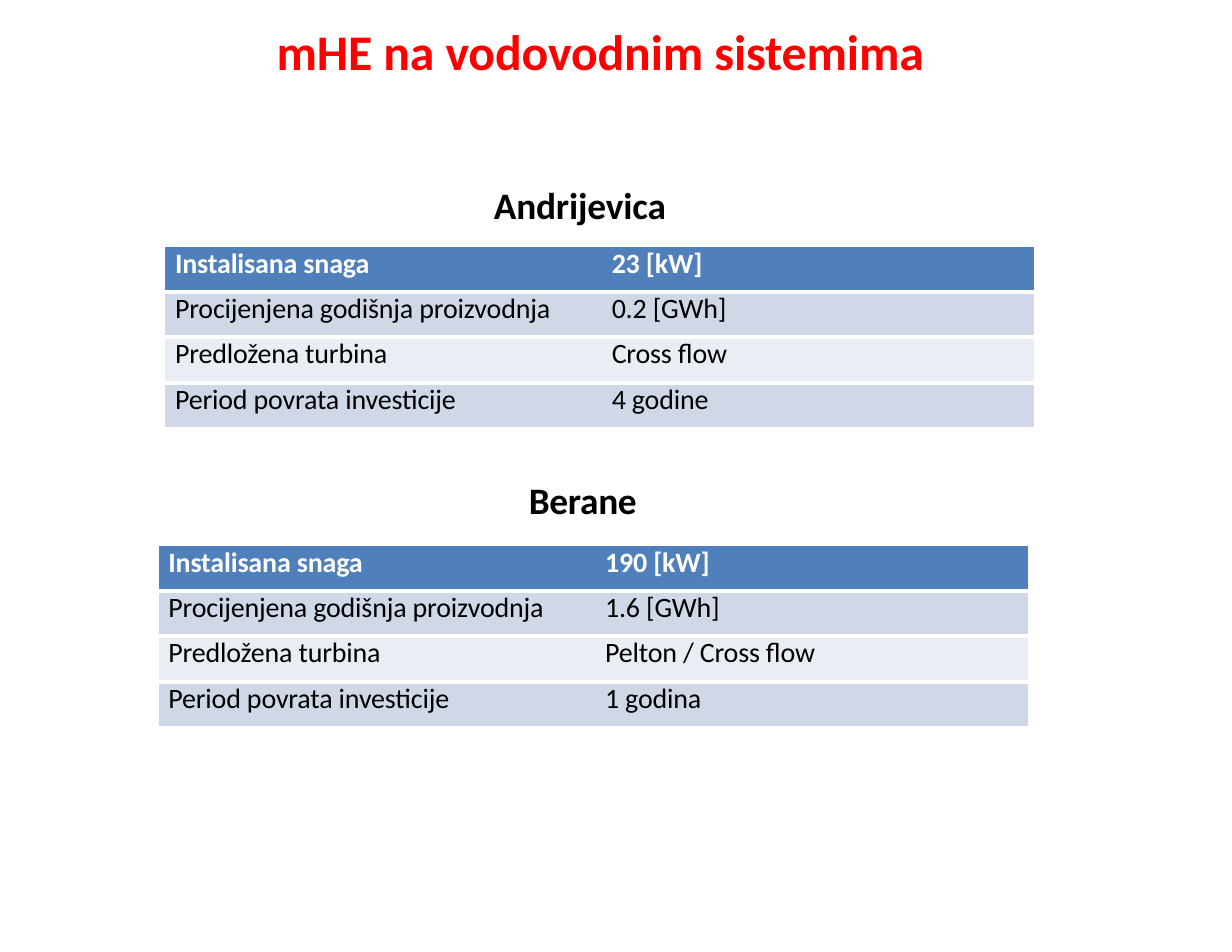
from lxml.etree import SubElement
from pptx import Presentation
from pptx.dml.color import RGBColor
from pptx.enum.text import MSO_ANCHOR
from pptx.oxml.ns import qn
from pptx.util import Pt

WHITE = "FFFFFF"
BLACK = "000000"
RED = "FF0000"
HEADER_BLUE = "4F80BC"
BANDS = ["D0D8E8", "E9EDF4"]
PLAIN_TABLE_STYLE = "{2D5ABB26-0587-4C30-8999-92F81FD0307C}"
COLUMN_WIDTHS = [270, 289.5]
COLUMN_INDENTS = [6.75, 17.5]
ROW_HEIGHT = 29.2
LABELS = ["Instalisana snaga", "Procijenjena godišnja proizvodnja",
          "Predložena turbina", "Period povrata investicije"]


def color(value):
    return RGBColor.from_string(value)


def write(frame, text, size=18, ink=BLACK, bold=False, spacing=-0.1):
    """Put one formatted paragraph in a text frame; spacing is in points."""
    span = frame.paragraphs[0].add_run()
    span.text = text
    span.font.name = "Calibri"
    span.font.size = Pt(size)
    span.font.bold = bold
    span.font.color.rgb = color(ink)
    span._r.get_or_add_rPr().set("spc", str(round(spacing * 100)))


def add_heading(slide, text, left, top, width, height, indent=0, inset=0, **style):
    box = slide.shapes.add_textbox(Pt(left), Pt(top), Pt(width), Pt(height))
    frame = box.text_frame
    frame.word_wrap = True
    frame.margin_left, frame.margin_top = Pt(indent), Pt(inset)
    frame.margin_right = frame.margin_bottom = 0
    write(frame, text, bold=True, **style)


def set_borders(cell, widths):
    """Draw white borders; they must come before the fill in the cell's XML."""
    properties = cell._tc.get_or_add_tcPr()
    for side in ("L", "R", "T", "B"):
        if side in widths:
            line = SubElement(properties, qn(f"a:ln{side}"), w=str(Pt(widths[side])))
            fill = SubElement(line, qn("a:solidFill"))
            SubElement(fill, qn("a:srgbClr"), val=WHITE)


def border_widths(row, column):
    widths = {"L" if column == 0 else "R": 1}
    if row == 0:
        widths["T"] = 1
    elif row < 3:
        widths["T"] = 3
    if row < 2:
        widths["B"] = 3
    elif row == 3:
        widths["B"] = 1
    return widths


def add_plant_table(slide, left, top, values):
    frame = slide.shapes.add_table(len(LABELS), 2, Pt(left), Pt(top),
                                   Pt(sum(COLUMN_WIDTHS)), Pt(ROW_HEIGHT * len(LABELS)))
    table = frame.table
    table._tbl.tblPr.find(qn("a:tableStyleId")).text = PLAIN_TABLE_STYLE
    for column, width in zip(table.columns, COLUMN_WIDTHS):
        column.width = Pt(width)
    for r, texts in enumerate(zip(LABELS, values)):
        table.rows[r].height = Pt(ROW_HEIGHT)
        header = r == 0
        for c, text in enumerate(texts):
            cell = table.cell(r, c)
            cell.margin_left = Pt(COLUMN_INDENTS[c])
            cell.margin_top = cell.margin_right = cell.margin_bottom = 0
            cell.vertical_anchor = MSO_ANCHOR.TOP
            set_borders(cell, border_widths(r, c))
            cell.fill.solid()
            cell.fill.fore_color.rgb = color(HEADER_BLUE if header else BANDS[(r - 1) % 2])
            write(cell.text_frame, text, ink=WHITE if header else BLACK, bold=header)


def main():
    deck = Presentation()
    deck.slide_width, deck.slide_height = Pt(792), Pt(612)
    slide = deck.slides.add_slide(deck.slide_layouts[6])

    add_heading(slide, "Andrijevica", 317.5, 117.4, 114, 31, size=24)
    add_heading(slide, "Berane", 340, 306.7, 73, 31, size=24, spacing=-0.2)
    add_plant_table(slide, 105.8, 158.4, ["23 [kW]", "0.2 [GWh]", "Cross flow", "4 godine"])
    add_plant_table(slide, 101.5, 350.6,
                    ["190 [kW]", "1.6 [GWh]", "Pelton / Cross flow", "1 godina"])
    add_heading(slide, "mHE na vodovodnim sistemima", 120.2, -1.4, 546.5, 54.7,
                indent=57.6, inset=15, size=32, ink=RED)

    deck.save("out.pptx")


if __name__ == "__main__":
    main()
